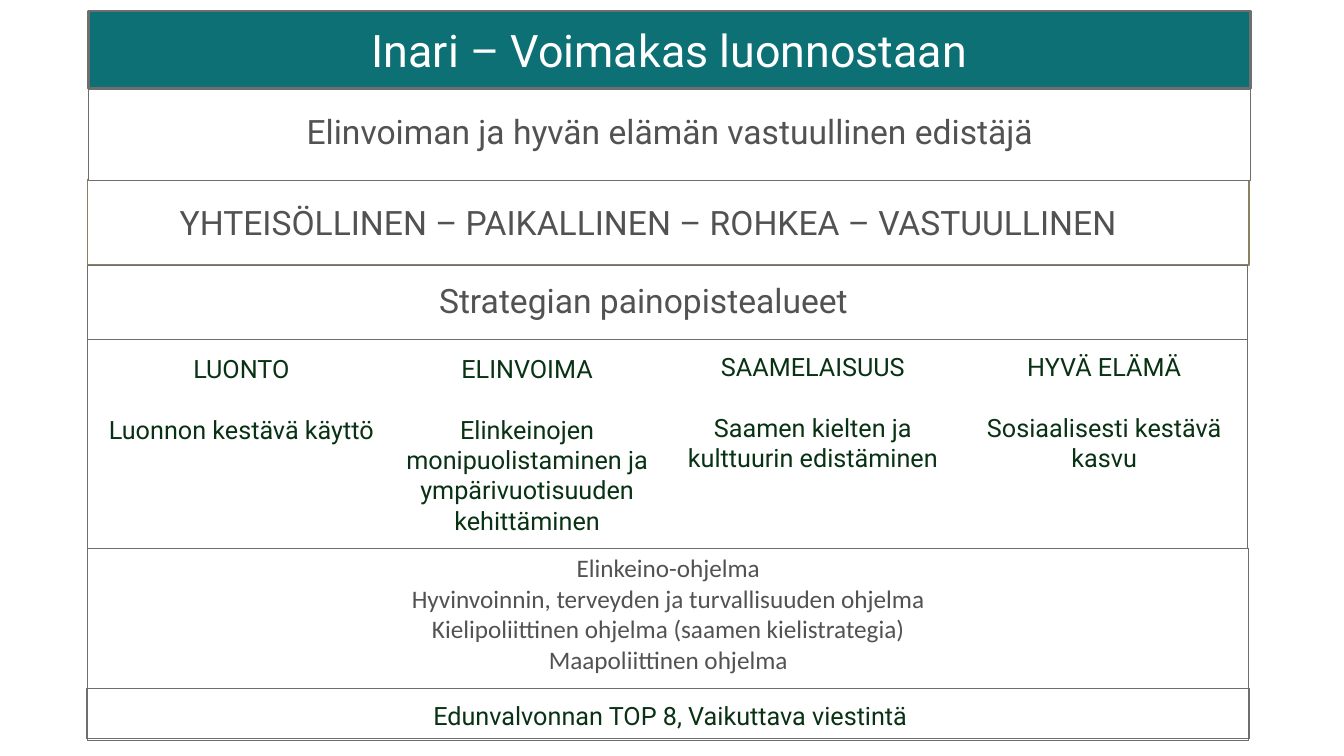
from dataclasses import dataclass

from lxml.etree import SubElement
from pptx import Presentation
from pptx.dml.color import RGBColor
from pptx.enum.shapes import MSO_SHAPE
from pptx.enum.text import MSO_ANCHOR, PP_ALIGN
from pptx.oxml.ns import qn
from pptx.util import Pt

WHITE, TEAL, GREY, GREEN = "FFFFFF", "0D7075", "525252", "083213"
BORDER, OLIVE = "6E6E6E", "8B8160"


@dataclass
class Box:
    left: float
    top: float
    width: float
    height: float


@dataclass
class Band:
    box: Box
    text: str
    size: float
    fill: str = WHITE
    color: str = GREY
    line: str = BORDER
    line_width: float = 0.5
    right_inset: float = 7.2


@dataclass
class FocusArea:
    box: Box
    title: str
    goal: str


VALUES = Band(Box(62.64, 128.16, 829.44, 61.2),
              "YHTEISÖLLINEN – PAIKALLINEN – ROHKEA – VASTUULLINEN", 24,
              line=OLIVE, line_width=1, right_inset=36)
MISSION = Band(Box(63.36, 59.04, 830.16, 69.84),
               "Elinvoiman ja hyvän elämän vastuullinen edistäjä", 24)
HEADLINE = Band(Box(63.36, 7.92, 830.16, 55.44), "Inari – Voimakas luonnostaan", 32,
                fill=TEAL, color=WHITE, line_width=2)

FOCUS_AREAS = [
    FocusArea(Box(66.96, 249.12, 210.96, 149.76), "LUONTO", "Luonnon kestävä käyttö"),
    FocusArea(Box(275.76, 249.12, 201.6, 149.76), "ELINVOIMA",
              "Elinkeinojen monipuolistaminen ja ympärivuotisuuden kehittäminen"),
    FocusArea(Box(477.36, 247.68, 206.64, 151.2), "SAAMELAISUUS",
              "Saamen kielten ja kulttuurin edistäminen"),
    FocusArea(Box(684, 247.68, 209.52, 151.2), "HYVÄ ELÄMÄ", "Sosiaalisesti kestävä kasvu"),
]

PROGRAMMES = [
    "Elinkeino-ohjelma",
    "Hyvinvoinnin, terveyden ja turvallisuuden ohjelma",
    "Kielipoliittinen ohjelma (saamen kielistrategia)",
    "Maapoliittinen ohjelma",
]


def rgb(color: str) -> RGBColor:
    return RGBColor.from_string(color)


def write(frame, *lines: str, size: float = 18, color: str = GREEN,
          font: str = "Roboto", gap: float = 0) -> None:
    """Write one centred paragraph per line, with a gap before all but the first."""
    frame.word_wrap = True
    for index, line in enumerate(lines):
        paragraph = frame.add_paragraph() if index else frame.paragraphs[0]
        paragraph.alignment = PP_ALIGN.CENTER
        if index and gap:
            paragraph.space_before = Pt(gap)
        run = paragraph.add_run()
        run.text = line
        run.font.size = Pt(size)
        run.font.name = font
        run.font.color.rgb = rgb(color)


def place(box: Box) -> tuple:
    return Pt(box.left), Pt(box.top), Pt(box.width), Pt(box.height)


def add_rectangle(slide, box: Box, fill: str):
    shape = slide.shapes.add_shape(MSO_SHAPE.RECTANGLE, *place(box))
    shape.shadow.inherit = False
    shape.fill.solid()
    shape.fill.fore_color.rgb = rgb(fill)
    shape.line.fill.background()
    return shape


def add_band(slide, band: Band) -> None:
    shape = add_rectangle(slide, band.box, band.fill)
    shape.line.color.rgb = rgb(band.line)
    shape.line.width = Pt(band.line_width)
    frame = shape.text_frame
    frame.vertical_anchor = MSO_ANCHOR.MIDDLE
    frame.margin_right = Pt(band.right_inset)
    write(frame, band.text, size=band.size, color=band.color)


def add_focus_area(slide, area: FocusArea) -> None:
    frame = add_rectangle(slide, area.box, WHITE).text_frame
    frame.vertical_anchor = MSO_ANCHOR.TOP
    write(frame, area.title, area.goal, gap=21.6)


def add_frame_table(slide, box: Box, row_heights: list[float]):
    """Add a one-column table with thin borders and no fill."""
    table = slide.shapes.add_table(len(row_heights), 1, *place(box)).table
    table.first_row = table.horz_banding = False
    for row, height in zip(table.rows, row_heights):
        row.height = Pt(height)
        cell = row.cells[0]
        properties = cell._tc.get_or_add_tcPr()
        for side in ("a:lnL", "a:lnR", "a:lnT", "a:lnB"):
            line = SubElement(properties, qn(side), w=str(Pt(1)))
            solid = SubElement(line, qn("a:solidFill"))
            SubElement(solid, qn("a:srgbClr"), val=BORDER)
        cell.fill.background()
    return table


def main() -> None:
    presentation = Presentation()
    presentation.slide_width, presentation.slide_height = Pt(960), Pt(540)
    slide = presentation.slides.add_slide(presentation.slide_layouts[6])

    # Values, focus areas, mission
    add_band(slide, VALUES)
    for area in FOCUS_AREAS:
        add_focus_area(slide, area)
    add_band(slide, MISSION)

    # Advocacy line
    advocacy = slide.shapes.add_textbox(*place(Box(64.08, 486, 829.44, 50.4))).text_frame
    advocacy.vertical_anchor = MSO_ANCHOR.MIDDLE
    write(advocacy, "Edunvalvonnan TOP 8, Vaikuttava viestintä")

    # Headline
    add_band(slide, HEADLINE)

    # Programmes and the frame around the advocacy line
    programmes = add_frame_table(slide, Box(62.64, 391.68, 829.44, 137.5), [137.5])
    write(programmes.cell(0, 0).text_frame, *PROGRAMMES, color=GREY, font="Calibri")
    add_frame_table(slide, Box(61.92, 491.76, 830.88, 36), [36])

    # Focus area heading and the frame around the focus areas
    focus = add_frame_table(slide, Box(62.64, 189.36, 828.72, 202.32), [53.28, 149.04])
    heading = focus.cell(0, 0)
    heading.vertical_anchor = MSO_ANCHOR.MIDDLE
    heading.margin_right = Pt(42)
    write(heading.text_frame, "Strategian painopistealueet", size=24, color=GREY)

    presentation.save("out.pptx")


if __name__ == "__main__":
    main()
